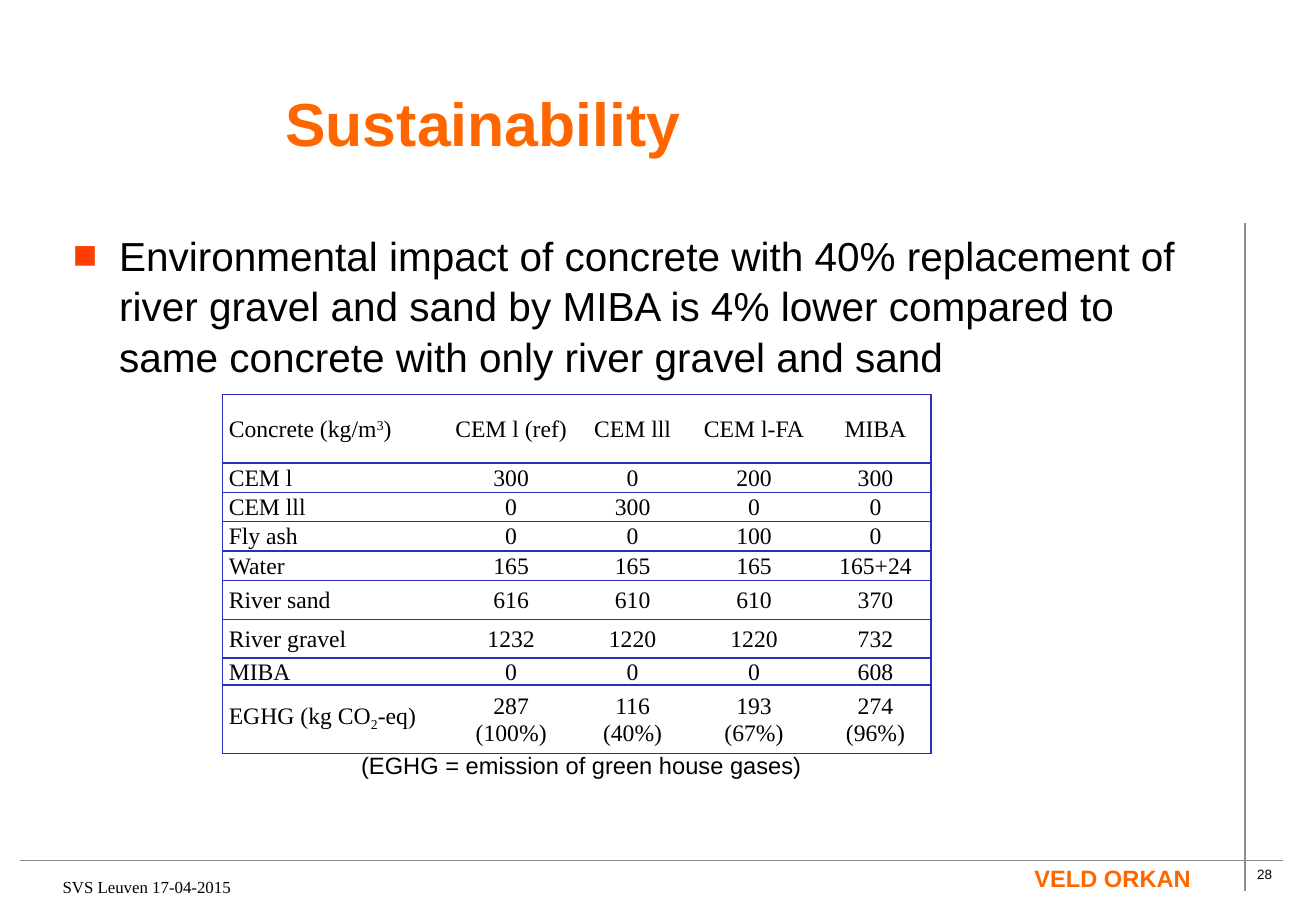
from lxml.etree import SubElement
from pptx import Presentation
from pptx.dml.color import RGBColor
from pptx.enum.shapes import MSO_CONNECTOR
from pptx.enum.text import MSO_ANCHOR, MSO_AUTO_SIZE, PP_ALIGN
from pptx.oxml import parse_xml
from pptx.oxml.ns import nsdecls, qn
from pptx.util import Inches, Pt

ORANGE, BULLET, BLACK = "FF6600", "FF3F00", "000000"
GREY, BLUE, WHITE = "8B8B8B", "2D2DB9", "FFFFFF"
SANS, SERIF = "Arial", "Times New Roman"

COLUMN_WIDTHS = [22, 13, 11, 13, 11]
ROW_HEIGHTS = [6.75] + [2.9] * 4 + [3.85] * 2 + [2, 6.75]
MIXES = [
    [[("Concrete (kg/m", 0), ("3", 30), (")", 0)],
     "CEM l (ref)", "CEM lll", "CEM l-FA", "MIBA"],
    ["CEM l", "300", "0", "200", "300"],
    ["CEM lll", "0", "300", "0", "0"],
    ["Fly ash", "0", "0", "100", "0"],
    ["Water", "165", "165", "165", "165+24"],
    ["River sand", "616", "610", "610", "370"],
    ["River gravel", "1232", "1220", "1220", "732"],
    ["MIBA", "0", "0", "0", "608"],
    [[("EGHG (kg CO", 0), ("2", -25), ("-eq)", 0)],
     "287\n(100%)", "116\n(40%)", "193\n(67%)", "274\n(96%)"],
]


def color(hex_string):
    return RGBColor.from_string(hex_string)


def write(frame, text, size=14, font=SANS, fill=BLACK, bold=False,
          align=PP_ALIGN.LEFT, spacing=None):
    """Fill a text frame; text is a string or a list of (words, baseline shift in %)."""
    lines = text.split("\n") if isinstance(text, str) else [text]
    for index, line in enumerate(lines):
        para = frame.add_paragraph() if index else frame.paragraphs[0]
        para.alignment = align
        para.space_before = Pt(0)
        para.line_spacing = spacing
        for words, shift in [(line, 0)] if isinstance(line, str) else line:
            span = para.add_run()
            span.text = words
            span.font.size, span.font.name, span.font.bold = Pt(size), font, bold
            span.font.color.rgb = color(fill)
            if shift:
                span.font._element.set("baseline", str(shift * 1000))


def add_bullet(para, character, fill, indent):
    properties = para._p.get_or_add_pPr()
    properties.set("marL", str(indent))
    properties.set("indent", str(-indent))
    bullet_color = SubElement(properties, qn("a:buClr"))
    SubElement(bullet_color, qn("a:srgbClr")).set("val", fill)
    SubElement(properties, qn("a:buFont")).set("typeface", SANS)
    SubElement(properties, qn("a:buChar")).set("char", character)


def set_borders(cell, shown):
    """Draw the sides named in shown (letters of LRTB) and clear the others."""
    properties = cell._tc.get_or_add_tcPr()
    for index, side in enumerate("LRTB"):
        paint = (f'<a:solidFill><a:srgbClr val="{BLUE}"/></a:solidFill>'
                 if side in shown else "<a:noFill/>")
        properties.insert(index, parse_xml(
            f'<a:ln{side} {nsdecls("a")} w="{Pt(1)}">{paint}</a:ln{side}>'))


class Page:
    """One slide on a grid of 130 columns by 90 rows."""

    COLUMNS, ROWS = 130, 90

    def __init__(self, deck):
        self.width, self.height = deck.slide_width, deck.slide_height
        self.slide = deck.slides.add_slide(deck.slide_layouts[1])

    def across(self, columns):
        return round(self.width * columns / self.COLUMNS)

    def down(self, rows):
        return round(self.height * rows / self.ROWS)

    def area(self, left, top, width, height):
        return self.across(left), self.down(top), self.across(width), self.down(height)

    def placeholder(self, index, area, text, **style):
        box = self.slide.placeholders[index]
        box.left, box.top, box.width, box.height = self.area(*area)
        box.text_frame.auto_size = MSO_AUTO_SIZE.NONE
        write(box.text_frame, text, **style)
        return box

    def label(self, area, text, **style):
        box = self.slide.shapes.add_textbox(*self.area(*area))
        box.text_frame.word_wrap = True
        write(box.text_frame, text, **style)

    def rule(self, start, end):
        line = self.slide.shapes.add_connector(
            MSO_CONNECTOR.STRAIGHT, self.across(start[0]), self.down(start[1]),
            self.across(end[0]), self.down(end[1]))
        line.line.color.rgb = color(GREY)
        line.line.width = Pt(1)
        SubElement(line._element.spPr, qn("a:effectLst"))

    def table(self, left, top, widths, heights, rows):
        area = self.area(left, top, sum(widths), sum(heights))
        table = self.slide.shapes.add_table(len(rows), len(widths), *area).table
        table.first_row = table.horz_banding = False
        for column, width in zip(table.columns, widths):
            column.width = self.across(width)
        for row, height, texts in zip(table.rows, heights, rows):
            row.height = self.down(height)
            for index, (cell, text) in enumerate(zip(row.cells, texts)):
                cell.fill.solid()
                cell.fill.fore_color.rgb = color(WHITE)
                cell.vertical_anchor = MSO_ANCHOR.MIDDLE
                cell.margin_left = cell.margin_right = Inches(0.05)
                cell.margin_top = cell.margin_bottom = 0
                write(cell.text_frame, text, font=SERIF, spacing=Pt(16),
                      align=PP_ALIGN.CENTER if index else PP_ALIGN.LEFT)
                sides = {0: "LTB", len(widths) - 1: "RTB"}
                set_borders(cell, sides.get(index, "TB"))


def main():
    deck = Presentation()
    deck.slide_width, deck.slide_height = Inches(10.83), Inches(7.5)
    page = Page(deck)

    page.rule((2, 85), (126.75, 85))
    page.rule((123, 88), (123, 22))
    page.label((123, 85, 5, 2.75), "28", size=8)
    page.label((101, 84.75, 20, 4), "VELD ORKAN", fill=ORANGE, bold=True)
    page.label((5, 86, 35, 3.25), "SVS Leuven 17-04-2015", size=10, font=SERIF)

    title = page.placeholder(0, (27, 5, 94, 12), "Sustainability", size=36,
                             fill=ORANGE, bold=True, spacing=1.3)
    title.text_frame.vertical_anchor = MSO_ANCHOR.MIDDLE
    body = page.placeholder(
        1, (6, 22, 115, 17),
        "Environmental impact of concrete with 40% replacement of river gravel and "
        "sand by MIBA is 4% lower compared to same concrete with only river gravel "
        "and sand", size=24, spacing=1.04)
    add_bullet(body.text_frame.paragraphs[0], "■", BULLET, Inches(0.38))

    page.table(22, 39, COLUMN_WIDTHS, ROW_HEIGHTS, MIXES)
    page.label((34.5, 73.6, 50, 4), "(EGHG = emission of green house gases)")
    deck.save("out.pptx")


if __name__ == "__main__":
    main()
